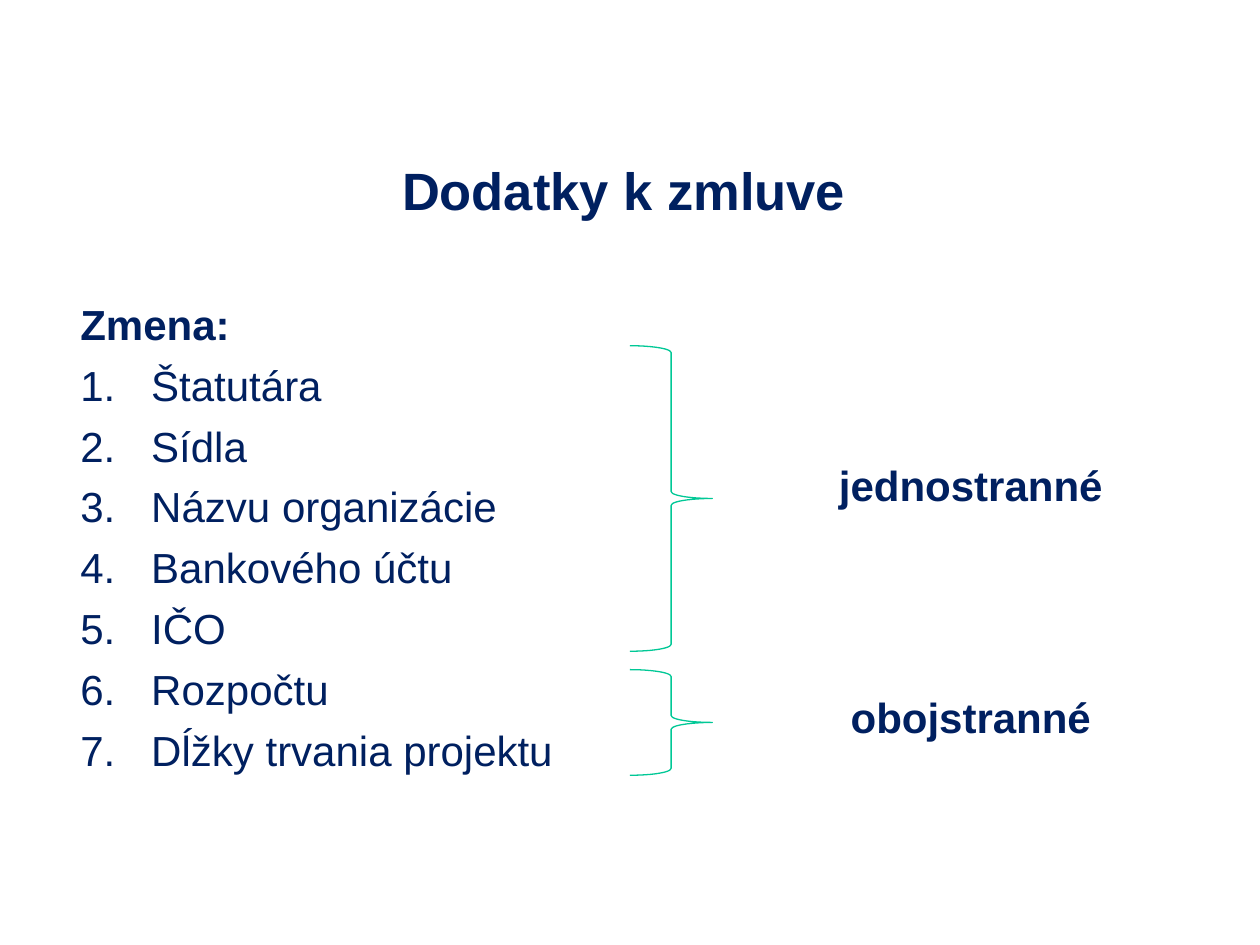
from dataclasses import dataclass

from lxml import etree
from pptx import Presentation
from pptx import util as u
from pptx.dml.color import RGBColor
from pptx.enum import shapes, text
from pptx.oxml import ns

NAVY = RGBColor(0x00, 0x20, 0x60)
GREEN = RGBColor(0x00, 0xC8, 0x96)
WHITE = RGBColor(0xFF, 0xFF, 0xFF)

BODY = {"name": "Arial", "size": u.Pt(24), "bold": False}
STRONG = {**BODY, "bold": True}
HEADING = {**STRONG, "size": u.Pt(30)}

CHANGES = ["Štatutára", "Sídla", "Názvu organizácie", "Bankového účtu",
           "IČO", "Rozpočtu", "Dĺžky trvania projektu"]
BORDER_POINTS = {"lnL": 1, "lnR": 1, "lnT": 1, "lnB": 3}
NUMBER_INDENT = u.Cm(1.43)


@dataclass(frozen=True)
class Group:
    """Amendments of one kind: a brace and the label beside it, in cm."""
    label: str
    brace_top: float
    brace_height: float
    label_top: float
    label_height: float


GROUPS = [
    Group("jednostranné", 6.97, 6.16, 9.22, 1.68),
    Group("obojstranné", 13.5, 2.13, 13.89, 1.32),
]


def write(paragraph, words: str, style: dict) -> None:
    paragraph.text = words
    font = paragraph.runs[0].font
    for attribute, value in style.items():
        setattr(font, attribute, value)
    font.color.rgb = NAVY


def add_text_frame(slide, left, top, width, height, anchor):
    box = slide.shapes.add_textbox(*map(u.Cm, (left, top, width, height)))
    frame = box.text_frame
    frame.word_wrap = True
    frame.vertical_anchor = anchor
    return frame


def number(paragraph) -> None:
    properties = paragraph._p.get_or_add_pPr()
    properties.set("marL", str(NUMBER_INDENT))
    properties.set("indent", str(-NUMBER_INDENT))
    etree.SubElement(properties, ns.qn("a:buFont"), typeface="+mj-lt")
    etree.SubElement(properties, ns.qn("a:buAutoNum"), type="arabicPeriod")


def add_brace(slide, group: Group) -> None:
    brace = slide.shapes.add_shape(
        shapes.MSO_SHAPE.RIGHT_BRACE, u.Cm(12.7), u.Cm(group.brace_top),
        u.Cm(1.66), u.Cm(group.brace_height))
    brace.shadow.inherit = False
    brace.fill.background()
    brace.line.color.rgb = GREEN
    brace.line.width = u.Pt(0.75)


def add_label(slide, group: Group) -> None:
    table = slide.shapes.add_table(
        1, 1, u.Cm(15.39), u.Cm(group.label_top),
        u.Cm(8.36), u.Cm(group.label_height)).table
    cell = table.cell(0, 0)
    properties = cell._tc.get_or_add_tcPr()
    for side, points in BORDER_POINTS.items():
        border = etree.SubElement(properties, ns.qn(f"a:{side}"), w=str(u.Pt(points)))
        fill = etree.SubElement(border, ns.qn("a:solidFill"))
        etree.SubElement(fill, ns.qn("a:srgbClr"), val=str(WHITE))
    cell.fill.background()
    paragraph = cell.text_frame.paragraphs[0]
    paragraph.alignment = text.PP_ALIGN.CENTER
    write(paragraph, group.label, STRONG)


def main() -> None:
    presentation = Presentation()
    presentation.slide_width = u.Cm(25.4)
    presentation.slide_height = u.Cm(19.05)
    slide = presentation.slides.add_slide(presentation.slide_layouts[6])

    # Heading
    heading = add_text_frame(slide, 1.78, 3.12, 21.59, 1.4,
                             text.MSO_ANCHOR.MIDDLE).paragraphs[0]
    heading.alignment = text.PP_ALIGN.CENTER
    write(heading, "Dodatky k zmluve", HEADING)

    # Numbered list of changes
    changes = add_text_frame(slide, 1.37, 5.77, 22.38, 9.98,
                             text.MSO_ANCHOR.BOTTOM)
    write(changes.paragraphs[0], "Zmena:", STRONG)
    for change in CHANGES:
        item = changes.add_paragraph()
        number(item)
        item.space_before = u.Pt(6)
        write(item, change, BODY)

    # Braces with the kind of amendment
    for group in GROUPS:
        add_brace(slide, group)
        add_label(slide, group)

    presentation.save("out.pptx")


if __name__ == "__main__":
    main()
